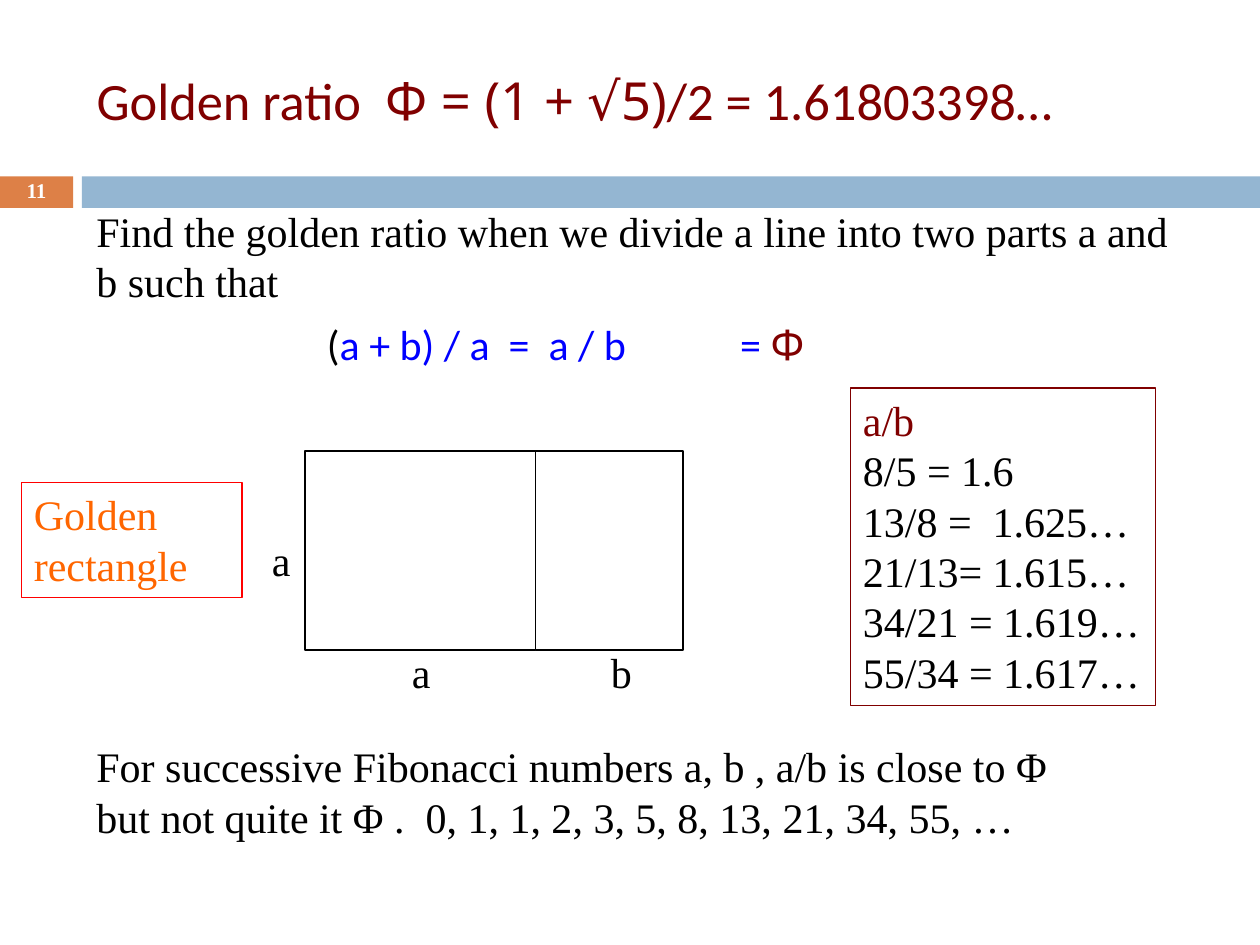
"""Build the golden ratio slide."""
import pptx
import pptx.dml.color
import pptx.enum.shapes
import pptx.enum.text
import pptx.oxml.ns
import pptx.util
from lxml import etree

Inches = pptx.util.Inches
Pt = pptx.util.Pt
RGBColor = pptx.dml.color.RGBColor
Anchor = pptx.enum.text.MSO_ANCHOR
Align = pptx.enum.text.PP_ALIGN

BLACK = RGBColor(0x00, 0x00, 0x00)
WHITE = RGBColor(0xFF, 0xFF, 0xFF)
MAROON = RGBColor(0x80, 0x00, 0x00)
BLUE = RGBColor(0x00, 0x00, 0xFF)
RED = RGBColor(0xFF, 0x00, 0x00)
ORANGE = RGBColor(0xFF, 0x66, 0x00)
BAND_ORANGE = RGBColor(0xDD, 0x80, 0x47)
BAND_BLUE = RGBColor(0x94, 0xB6, 0xD2)

SERIF, SANS, SYMBOL = "Times New Roman", "Calibri", "Noto Sans"
WIDTH, HEIGHT = 10, 7.5
MARGIN = WIDTH / 15
BAND_TOP, BAND_HEIGHT, TAB_WIDTH = 1.4, 0.25, 0.58
SQUARE_LEFT, SQUARE_TOP, SQUARE_HEIGHT = 2.42, 3.58, 1.58
SIDE_A, SIDE_B = 1.83, 1.17
LABEL_SIZE = 0.36, 0.5


def lengths(*values):
    """Convert inches to slide units."""
    return [Inches(value) for value in values]


def style(span, color, font=SERIF, size=24, bold=False):
    """Set the look of one run."""
    span.font.name = font
    span.font.size = Pt(size)
    span.font.bold = bold
    span.font.color.rgb = color


def add_spans(para, spans, size=24):
    """Append runs given as text, colour and font."""
    for text, color, font in spans:
        span = para.add_run()
        span.text = text
        style(span, color, font, size)


def write(box, lines, colors, wrap=False):
    """Fill a box with left-aligned serif lines, one colour each."""
    frame = box.text_frame
    frame.text = "\n".join(lines)
    frame.word_wrap = wrap
    frame.vertical_anchor = Anchor.TOP
    for para, color in zip(frame.paragraphs, colors):
        para.alignment = Align.LEFT
        para.line_spacing = Pt(28.8)
        style(para.runs[0], color)


def add_rectangle(shapes, place, fill=None, line=None, weight=0.75):
    """Draw a flat rectangle with an optional fill and outline."""
    box = shapes.add_shape(pptx.enum.shapes.MSO_SHAPE.RECTANGLE, *lengths(*place))
    box.shadow.inherit = False
    if fill is None:
        box.fill.background()
    else:
        box.fill.solid()
        box.fill.fore_color.rgb = fill
    if line is None:
        box.line.fill.background()
    else:
        box.line.color.rgb = line
        box.line.width = Pt(weight)
    return box


def add_band(slide):
    """Draw the band under the title with its page number."""
    gap = TAB_WIDTH + 0.07
    add_rectangle(slide.shapes, (0, BAND_TOP, TAB_WIDTH, BAND_HEIGHT), BAND_ORANGE)
    add_rectangle(slide.shapes, (gap, BAND_TOP, WIDTH - gap, BAND_HEIGHT), BAND_BLUE)
    box = slide.shapes.add_textbox(*lengths(0, BAND_TOP - 0.01, TAB_WIDTH, 0.27))
    frame = box.text_frame
    frame.text = "11"
    frame.word_wrap = True
    frame.vertical_anchor = Anchor.MIDDLE
    para = frame.paragraphs[0]
    para.alignment = Align.CENTER
    para.line_spacing = 0.8
    style(para.runs[0], WHITE, size=12, bold=True)


def add_title(slide):
    """Place and write the title."""
    title = slide.shapes.title
    title.left, title.top, title.width, title.height = lengths(
        MARGIN, 0.25, WIDTH - MARGIN, 1.08)
    frame = title.text_frame
    frame.auto_size = pptx.enum.text.MSO_AUTO_SIZE.NONE
    frame.vertical_anchor = Anchor.MIDDLE
    frame.margin_right = Inches(0.14)
    para = frame.paragraphs[0]
    para.alignment = Align.LEFT
    add_spans(para, [("Golden ratio  ", MAROON, SANS),
                     ("Φ = (1 + √5)", MAROON, SYMBOL),
                     ("/2 = 1.61803398…", MAROON, SANS)], size=30)


def add_tab_stops(para, stops):
    """Give a paragraph left tab stops in inches."""
    qualify = pptx.oxml.ns.qn
    properties = para._p.get_or_add_pPr()
    tabs = etree.SubElement(properties, qualify("a:tabLst"))
    for stop in stops:
        etree.SubElement(tabs, qualify("a:tab"), pos=str(Inches(stop)), algn="l")


def add_definition(slide):
    """Write the definition and its formula."""
    box = slide.shapes.add_textbox(*lengths(MARGIN, 1.58, 8.92, 1.58))
    write(box, ["Find the golden ratio when we divide a line into two parts "
                "a and b such that"], [BLACK], wrap=True)
    frame = box.text_frame
    frame.margin_right = Inches(0.14)
    formula = frame.add_paragraph()
    formula.line_spacing = Pt(28.8)
    for para in frame.paragraphs:
        para.space_before = Pt(7)
    add_tab_stops(formula, [1.83, 5.11])
    add_spans(formula, [("\t(", BLACK, SANS),
                        ("a + b) / a  =  a / b\t= ", BLUE, SANS),
                        ("Φ", MAROON, SYMBOL)])


def add_part(slide, left, width, labels):
    """Group one part of the golden rectangle with its side labels."""
    shapes = slide.shapes.add_group_shape().shapes
    add_rectangle(shapes, (left, SQUARE_TOP, width, SQUARE_HEIGHT), line=BLACK, weight=0.79)
    for text, x, y in labels:
        write(shapes.add_textbox(*lengths(x, y, *LABEL_SIZE)), [text], [BLACK])


def main():
    """Build and save the slide."""
    deck = pptx.Presentation()
    deck.slide_width, deck.slide_height = lengths(WIDTH, HEIGHT)
    slide = deck.slides.add_slide(deck.slide_layouts[5])
    add_band(slide)
    add_title(slide)
    add_definition(slide)

    closing = slide.shapes.add_textbox(*lengths(MARGIN, 5.83, 7.81, 0.91))
    write(closing, ["For successive Fibonacci numbers a, b , a/b is close to Φ",
                    "but not quite it Φ .  0, 1, 1, 2, 3, 5, 8, 13, 21, 34, 55, …"],
          [BLACK] * 2)

    label_top = SQUARE_TOP + 1.5
    add_part(slide, SQUARE_LEFT, SIDE_A,
             [("a", SQUARE_LEFT - LABEL_SIZE[0], 4.19),
              ("a", SQUARE_LEFT + 0.75, label_top)])
    add_part(slide, SQUARE_LEFT + SIDE_A, SIDE_B,
             [("b", SQUARE_LEFT + SIDE_A + 0.5, label_top)])

    name = add_rectangle(slide.shapes, (0.17, 3.83, 1.75, 0.91), line=RED)
    write(name, ["Golden rectangle"], [ORANGE], wrap=True)
    ratios = add_rectangle(slide.shapes, (6.75, 3.08, 2.42, 2.52), line=MAROON)
    write(ratios, ["a/b", "8/5 = 1.6", "13/8 =  1.625…", "21/13= 1.615…",
                   "34/21 = 1.619…", "55/34 = 1.617…"], [MAROON] + [BLACK] * 5)
    deck.save("out.pptx")


if __name__ == "__main__":
    main()
